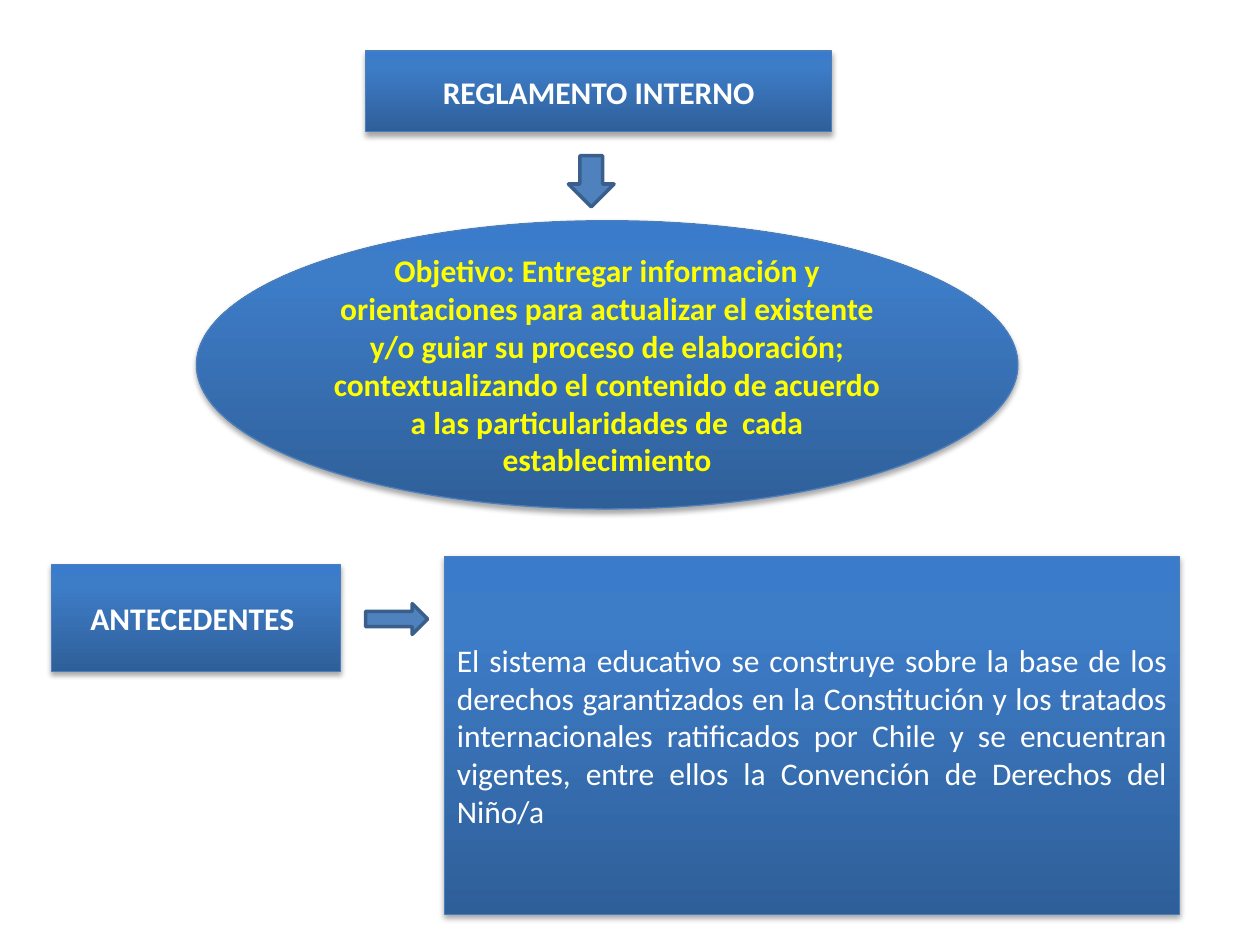
from copy import deepcopy

from lxml import etree
from pptx import Presentation
from pptx.dml.color import RGBColor
from pptx.enum.shapes import MSO_SHAPE as Shape
from pptx.enum.text import MSO_ANCHOR as Anchor, PP_ALIGN as Align
from pptx.oxml.ns import nsdecls, qn
from pptx.util import Cm, Pt

COLORS = {
    "dark": "2F5F99", "mid": "3D7CC7", "light": "3A7CCB", "edge": "4B7EBC",
    "arrow": "4F81BD", "arrow_edge": "3A5F8C",
    "white": "FFFFFF", "yellow": "FFFF00", "shadow": "000000",
}
GRADIENT = [(0, "dark"), (0.8, "mid"), (1, "light")]

PANELS = [
    (Shape.OVAL, (3.96, 4.45, 16.56, 5.81),
     "Objetivo: Entregar información y orientaciones para actualizar el existente "
     "y/o guiar su proceso de elaboración; contextualizando el contenido de acuerdo "
     "a las particularidades de  cada establecimiento", "yellow", True, Align.CENTER),
    (Shape.RECTANGLE, (7.37, 1.03, 9.4, 1.63),
     "REGLAMENTO INTERNO", "white", True, Align.CENTER),
    (Shape.RECTANGLE, (1.04, 11.38, 5.82, 2.16),
     "ANTECEDENTES ", "white", True, Align.CENTER),
    (Shape.RECTANGLE, (8.96, 11.22, 14.82, 7.21),
     "El sistema educativo se construye sobre la base de los derechos garantizados "
     "en la Constitución y los tratados internacionales ratificados por Chile y se "
     "encuentran vigentes, entre ellos la Convención de Derechos del Niño/a",
     "white", False, Align.JUSTIFY),
]
ARROWS = [
    (Shape.DOWN_ARROW, (11.46, 3.14, 0.92, 1.03)),
    (Shape.RIGHT_ARROW, (7.37, 12.17, 1.25, 0.62)),
]
SHADOW = (
    f'<a:outerShdw {nsdecls("a")} blurRad="{Pt(3.1)}" dist="{Pt(1.8)}" dir="5400000" '
    f'rotWithShape="0"><a:srgbClr val="{COLORS["shadow"]}"><a:alpha val="35000"/>'
    '</a:srgbClr></a:outerShdw>'
)


def rgb(name):
    return RGBColor.from_string(COLORS[name])


def apply(target, values):
    for key, value in values.items():
        setattr(target, key, value)


def add_outlined(slide, kind, box, edge, width):
    shape = slide.shapes.add_shape(kind, *map(Cm, box))
    shape.shadow.inherit = False
    shape.line.color.rgb = rgb(edge)
    shape.line.width = Pt(width)
    return shape


def add_panel(slide, kind, box, wording, color, bold, align):
    panel = add_outlined(slide, kind, box, "edge", 0.75)
    panel.fill.gradient()
    panel.fill.gradient_angle = 90
    properties = panel.element.spPr
    stops = properties.find(".//" + qn("a:gsLst"))
    stops.append(deepcopy(stops[-1]))
    for stop, (position, name) in zip(panel.fill.gradient_stops, GRADIENT):
        stop.position = position
        stop.color.rgb = rgb(name)
    properties.find(qn("a:effectLst")).append(etree.fromstring(SHADOW))

    frame = panel.text_frame
    apply(frame, {"word_wrap": True, "vertical_anchor": Anchor.MIDDLE})
    paragraph = frame.paragraphs[0]
    paragraph.alignment = align
    run = paragraph.add_run()
    run.text = wording
    apply(run.font, {"name": "Calibri", "size": Pt(18), "bold": bold})
    run.font.color.rgb = rgb(color)


def add_arrow(slide, kind, box):
    arrow = add_outlined(slide, kind, box, "arrow_edge", 2)
    arrow.fill.solid()
    arrow.fill.fore_color.rgb = rgb("arrow")


def main():
    deck = Presentation()
    apply(deck, {"slide_width": Cm(25.4), "slide_height": Cm(19.05)})
    slide = deck.slides.add_slide(deck.slide_layouts[6])
    for panel in PANELS:
        add_panel(slide, *panel)
    for arrow in ARROWS:
        add_arrow(slide, *arrow)
    deck.save("out.pptx")


if __name__ == "__main__":
    main()
